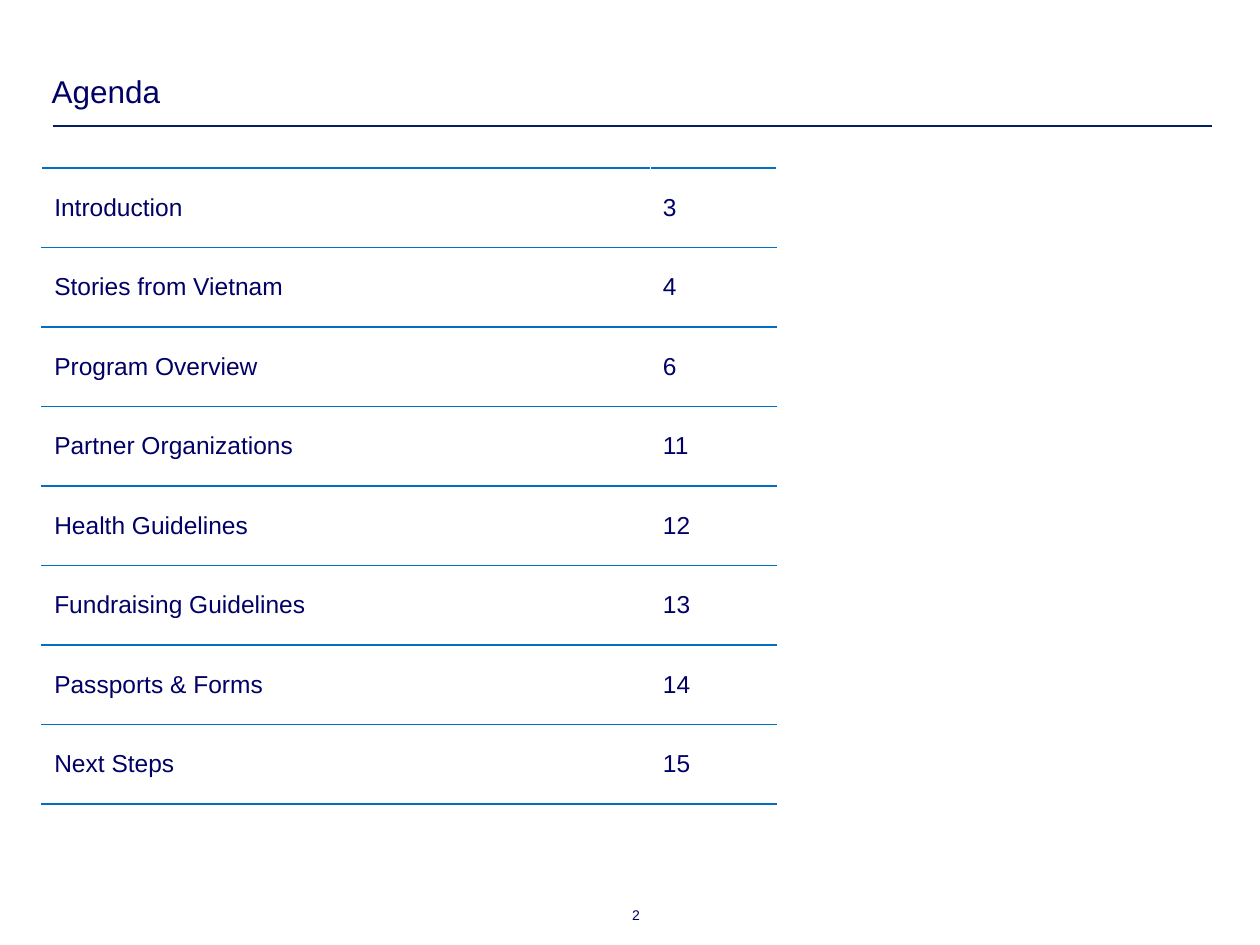
from dataclasses import dataclass

from lxml import etree
from pptx import Presentation
from pptx import util as u
from pptx.dml.color import RGBColor
from pptx.enum import shapes, text
from pptx.oxml import ns

NAVY = RGBColor(0x00, 0x00, 0x66)
RULE_NAVY = RGBColor(0x00, 0x20, 0x60)
BLUE = RGBColor(0x00, 0x70, 0xC0)
WHITE = RGBColor(0xFF, 0xFF, 0xFF)
FONT = "Arial"


@dataclass(frozen=True)
class AgendaItem:
    topic: str
    page: int


@dataclass(frozen=True)
class Border:
    side: str
    color: RGBColor
    width: float = 1


AGENDA = [
    AgendaItem("Introduction", 3),
    AgendaItem("Stories from Vietnam", 4),
    AgendaItem("Program Overview", 6),
    AgendaItem("Partner Organizations", 11),
    AgendaItem("Health Guidelines", 12),
    AgendaItem("Fundraising Guidelines", 13),
    AgendaItem("Passports & Forms", 14),
    AgendaItem("Next Steps", 15),
]
BORDERS = [
    Border("L", WHITE),
    Border("R", WHITE),
    Border("T", BLUE),
    Border("B", BLUE),
]
COLUMN_WIDTHS = [u.Cm(12.27), u.Cm(2.54)]


def style_paragraph(paragraph, size: float, alignment=text.PP_ALIGN.LEFT, spacing: float = 1) -> None:
    paragraph.alignment = alignment
    paragraph.line_spacing = spacing
    paragraph.font.name = FONT
    paragraph.font.size = u.Pt(size)
    paragraph.font.color.rgb = NAVY


def set_margins(frame, margin: u.Length) -> None:
    frame.margin_left = frame.margin_right = margin
    frame.margin_top = frame.margin_bottom = margin


def add_border(cell, border: Border) -> None:
    properties = cell._tc.get_or_add_tcPr()
    line = etree.SubElement(properties, ns.qn(f"a:ln{border.side}"), w=str(u.Pt(border.width)))
    fill = etree.SubElement(line, ns.qn("a:solidFill"))
    etree.SubElement(fill, ns.qn("a:srgbClr"), val=str(border.color))


def fill_cell(cell, content: str) -> None:
    cell.text = content
    cell.vertical_anchor = text.MSO_ANCHOR.MIDDLE
    style_paragraph(cell.text_frame.paragraphs[0], 14)
    for border in BORDERS:
        add_border(cell, border)
    cell.fill.solid()
    cell.fill.fore_color.rgb = WHITE


def add_title(slide) -> None:
    title = slide.shapes.title
    title.left, title.top = u.Cm(0.91), u.Cm(1.37)
    title.width, title.height = u.Cm(21.92), u.Cm(0.99)
    frame = title.text_frame
    frame.text = "Agenda"
    frame.vertical_anchor = text.MSO_ANCHOR.BOTTOM
    frame.auto_size = text.MSO_AUTO_SIZE.SHAPE_TO_FIT_TEXT
    set_margins(frame, u.Cm(0.13))
    style_paragraph(frame.paragraphs[0], 18, spacing=0.95)


def add_title_rule(slide) -> None:
    rule = slide.shapes.add_connector(
        shapes.MSO_CONNECTOR.STRAIGHT, u.Cm(1.06), u.Cm(2.54), u.Cm(24.43), u.Cm(2.54)
    )
    rule.line.color.rgb = RULE_NAVY
    rule.line.width = u.Pt(1.5)
    etree.SubElement(rule._element.spPr, ns.qn("a:effectLst"))


def add_agenda(slide, items: list[AgendaItem]) -> None:
    table = slide.shapes.add_table(
        len(items), len(COLUMN_WIDTHS), u.Cm(0.84), u.Cm(3.39), sum(COLUMN_WIDTHS), u.Cm(12.82)
    ).table
    table.first_row = False
    table.horz_banding = False
    for column, width in zip(table.columns, COLUMN_WIDTHS):
        column.width = width
    for row, item in zip(table.rows, items):
        for cell, content in zip(row.cells, (item.topic, str(item.page))):
            fill_cell(cell, content)


def add_page_number(slide, number: int) -> None:
    box = slide.shapes.add_textbox(u.Cm(10.36), u.Cm(18.31), u.Cm(2.54), u.Cm(0.33))
    frame = box.text_frame
    frame.word_wrap = True
    frame.auto_size = text.MSO_AUTO_SIZE.SHAPE_TO_FIT_TEXT
    set_margins(frame, u.Cm(0))
    frame.text = str(number)
    style_paragraph(frame.paragraphs[0], 8, text.PP_ALIGN.RIGHT, 0.95)


def main() -> None:
    presentation = Presentation()
    presentation.slide_width, presentation.slide_height = u.Cm(25.4), u.Cm(19.05)
    slide = presentation.slides.add_slide(presentation.slide_layouts.get_by_name("Title Only"))
    add_page_number(slide, 2)
    add_title_rule(slide)
    add_title(slide)
    add_agenda(slide, AGENDA)
    presentation.save("out.pptx")


if __name__ == "__main__":
    main()
